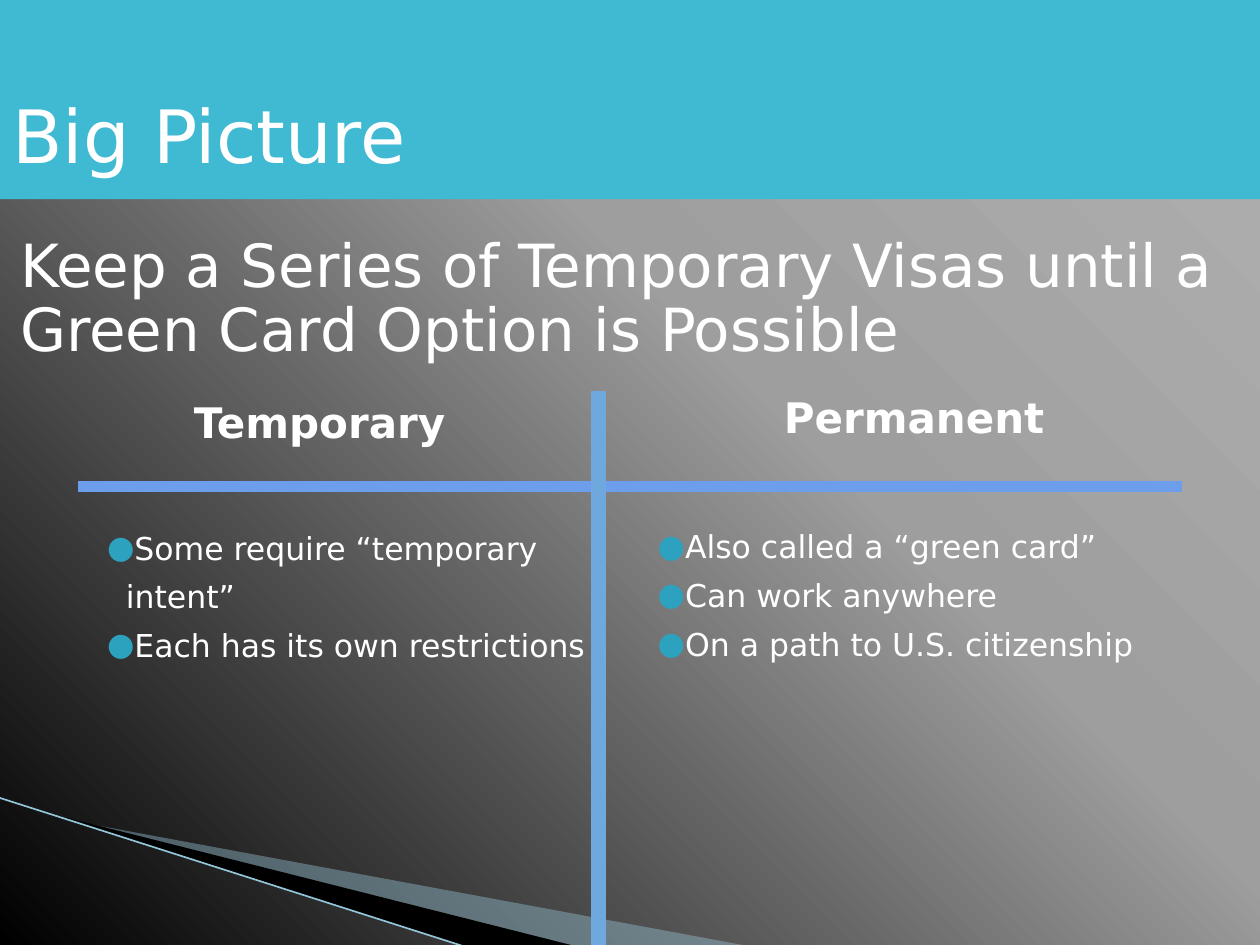
from lxml.etree import SubElement
from pptx import Presentation
from pptx.dml.color import RGBColor
from pptx.enum.shapes import MSO_CONNECTOR as Connector, MSO_SHAPE as Shape
from pptx.enum.text import MSO_ANCHOR as Anchor, MSO_AUTO_SIZE as AutoSize, PP_ALIGN as Align
from pptx.oxml import parse_xml
from pptx.oxml.ns import nsdecls, qn
from pptx.util import Inches, Pt

FONT = "DejaVu Sans"
COLORS = {
    "text": "FFFFFF",
    "banner": "40BAD2",
    "bullet": "2DA2BF",
    "swoosh": "9CCADC",
    "shade": "000000",
    "edge": "93C5D8",
    "across": "6D9EEB",
    "down": "6FA8DC",
}
BACKGROUND = [(0, "B1B1B1"), (40, "9E9E9E"), (100, "000000")]


def color(name):
    return RGBColor.from_string(COLORS[name])


def set_background(page):
    stops = "".join(
        f'<a:gs pos="{place * 1000}"><a:srgbClr val="{value}"/></a:gs>'
        for place, value in BACKGROUND
    )
    page.element.cSld.insert(0, parse_xml(
        f'<p:bg {nsdecls("p", "a")}><p:bgPr><a:gradFill rotWithShape="1">'
        f'<a:gsLst>{stops}</a:gsLst><a:path path="circle">'
        '<a:fillToRect l="100000" t="0" r="0" b="100000"/></a:path>'
        '</a:gradFill><a:effectLst/></p:bgPr></p:bg>'
    ))


def place(shape, left, top, width, height):
    shape.left, shape.top = Inches(left), Inches(top)
    shape.width, shape.height = Inches(width), Inches(height)


def add_span(para, text, size, bold=False):
    span = para.add_run()
    span.text = text
    span.font.name = FONT
    span.font.size = Pt(size)
    span.font.bold = bold
    span.font.color.rgb = color("text")


def add_box(page, *bounds):
    box = page.shapes.add_textbox(*map(Inches, bounds))
    box.text_frame.word_wrap = True
    return box.text_frame


def fill_title(page, text):
    title = page.shapes.title
    place(title, 0.06, 1.64, 10, 1.48)
    frame = title.text_frame
    frame.auto_size = AutoSize.NONE
    frame.vertical_anchor = Anchor.MIDDLE
    para = frame.paragraphs[0]
    para.alignment = Align.LEFT
    para.line_spacing = 0.9
    add_span(para, text, 34)


def add_banner(page, text):
    banner = page.shapes.add_shape(Shape.RECTANGLE, 0, 0, Inches(10), Inches(1.58))
    banner.shadow.inherit = False
    banner.fill.solid()
    banner.fill.fore_color.rgb = color("banner")
    banner.line.fill.background()
    frame = banner.text_frame
    frame.vertical_anchor = Anchor.TOP
    frame.margin_top = Inches(0.79)
    para = frame.paragraphs[0]
    para.alignment = Align.LEFT
    para.line_spacing = 0.9
    add_span(para, text, 42)


def add_heading(page, text, bounds, align):
    para = add_box(page, *bounds).paragraphs[0]
    para.alignment = align
    properties = para._p.get_or_add_pPr()
    properties.set("marL", "0")
    properties.set("indent", str(Inches(0.5)))
    add_span(para, text, 24, bold=True)


def add_bullet(para):
    properties = para._p.get_or_add_pPr()
    properties.set("marL", str(Inches(0.36)))
    properties.set("indent", str(Inches(-0.15)))
    tint = SubElement(properties, qn("a:buClr"))
    SubElement(tint, qn("a:srgbClr"), val=COLORS["bullet"])
    SubElement(properties, qn("a:buFont"), typeface=FONT)
    SubElement(properties, qn("a:buChar"), char="●")


def add_list(page, items, left, top):
    frame = add_box(page, left, top, 4.04, 1.26)
    frame.margin_left = frame.margin_right = 0
    frame.margin_top = frame.margin_bottom = 0
    for index, item in enumerate(items):
        para = frame.add_paragraph() if index else frame.paragraphs[0]
        add_bullet(para)
        para.line_spacing = 1.29
        add_span(para, item, 18)


def add_line(page, start, end, name, width):
    line = page.shapes.add_connector(Connector.STRAIGHT, *map(Inches, start + end))
    line.line.color.rgb = color(name)
    line.line.width = Pt(width)
    SubElement(line._element.spPr, qn("a:effectLst"))


def add_wedge(page, points, name, opacity=100):
    start, *rest = [tuple(map(Inches, point)) for point in points]
    builder = page.shapes.build_freeform(*start)
    builder.add_line_segments(rest, close=True)
    wedge = builder.convert_to_shape()
    wedge.shadow.inherit = False
    wedge.fill.solid()
    wedge.fill.fore_color.rgb = color(name)
    wedge.line.fill.background()
    if opacity < 100:
        tint = wedge._element.spPr.find(qn("a:solidFill"))[0]
        SubElement(tint, qn("a:alpha"), val=str(opacity * 1000))


def main():
    deck = Presentation()
    deck.slide_width, deck.slide_height = Inches(10), Inches(7.5)
    page = deck.slides.add_slide(deck.slide_layouts[5])
    set_background(page)

    add_wedge(page, [(0.55, 6.51), (5.95, 7.51), (4.56, 7.51), (0.55, 6.5)], "swoosh", 40)
    add_wedge(page, [(0.53, 6.49), (4.57, 7.51), (3.72, 7.52), (0.54, 6.5)], "shade")
    add_line(page, (-0.01, 6.33), (3.71, 7.52), "edge", 0.95)

    fill_title(page, "Keep a Series of Temporary Visas until a Green Card Option is Possible")
    add_heading(page, "Temporary", (0.94, 3.1, 7.62, 0.8), Align.LEFT)
    add_line(page, (0.62, 3.86), (9.38, 3.86), "across", 6)
    add_line(page, (4.75, 3.1), (4.75, 7.51), "down", 9)
    add_heading(page, "Permanent", (4.84, 3.06, 4.33, 0.8), Align.CENTER)

    add_list(page, ["Some require “temporary intent”", "Each has its own restrictions"], 0.64, 4.11)
    add_list(page, [
        "Also called a “green card”",
        "Can work anywhere",
        "On a path to U.S. citizenship",
    ], 5.01, 4.1)
    add_banner(page, "Big Picture")
    deck.save("out.pptx")


if __name__ == "__main__":
    main()
